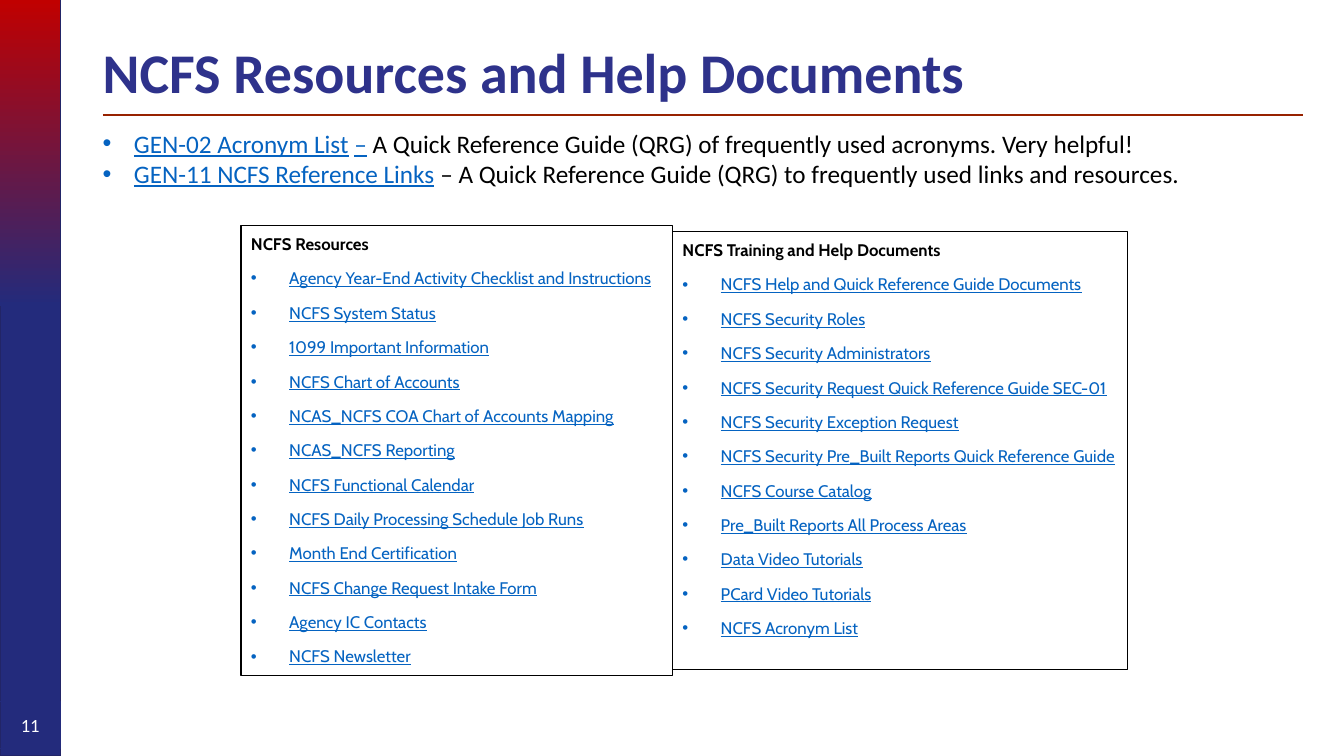
from lxml.etree import SubElement
from pptx import Presentation
from pptx.dml.color import RGBColor
from pptx.enum.shapes import MSO_CONNECTOR, MSO_SHAPE
from pptx.enum.text import MSO_ANCHOR as ANCHOR, PP_ALIGN as ALIGN
from pptx.oxml.ns import qn
from pptx.util import Pt

SCALE = 9144  # EMU per px, 100 px to the inch
NAVY, RED, LINK, BLACK, WHITE = "232B7C", "C00000", "0563C1", "000000", "FFFFFF"

TITLE = {"size": Pt(40), "name": "Calibri", "bold": True}
INTRO = {"size": Pt(18), "name": "Calibri"}
NUMBER = {"size": Pt(13.3), "name": "Calibri"}
HEADING = {"size": Pt(12), "name": "Cabin", "bold": True}
ITEM = {"size": Pt(12), "name": "Cabin"}
LIST_FORMAT = {"line_spacing": 1.15, "space_after": Pt(8), "alignment": ALIGN.LEFT}

GUIDES = [
    [("GEN-02 Acronym List", True), (" ", False), ("–", True),
     (" A Quick Reference Guide (QRG) of frequently used acronyms. Very helpful!", False)],
    [("GEN-11 NCFS Reference Links", True),
     (" – A Quick Reference Guide (QRG) to frequently used links and resources.", False)],
]
RESOURCES = [
    "Agency Year-End Activity Checklist and Instructions",
    "NCFS System Status",
    "1099 Important Information",
    "NCFS Chart of Accounts",
    "NCAS_NCFS COA Chart of Accounts Mapping",
    "NCAS_NCFS Reporting",
    "NCFS Functional Calendar",
    "NCFS Daily Processing Schedule Job Runs",
    "Month End Certification",
    "NCFS Change Request Intake Form",
    "Agency IC Contacts",
    "NCFS Newsletter",
]
TRAINING = [
    "NCFS Help and Quick Reference Guide Documents",
    "NCFS Security Roles",
    "NCFS Security Administrators",
    "NCFS Security Request Quick Reference Guide SEC-01",
    "NCFS Security Exception Request",
    "NCFS Security Pre_Built Reports Quick Reference Guide",
    "NCFS Course Catalog",
    "Pre_Built Reports All Process Areas",
    "Data Video Tutorials",
    "PCard Video Tutorials",
    "NCFS Acronym List",
]


def px(*lengths):
    return [length * SCALE for length in lengths]


def rgb(value):
    return RGBColor.from_string(value)


def apply(target, values):
    for name, value in values.items():
        setattr(target, name, value)


def add_rect(slide, box, fill=None, line=None, width=0.75):
    rect = slide.shapes.add_shape(MSO_SHAPE.RECTANGLE, *px(*box))
    rect.shadow.inherit = False
    if fill:
        rect.fill.solid()
        rect.fill.fore_color.rgb = rgb(fill)
    else:
        rect.fill.background()
    if line:
        rect.line.color.rgb = rgb(line)
        rect.line.width = Pt(width)
    else:
        rect.line.fill.background()
    return rect


def open_frame(shape, anchor=ANCHOR.TOP):
    apply(shape.text_frame, {"word_wrap": True, "vertical_anchor": anchor})
    return shape.text_frame


def add_run(paragraph, text, style, color, underline=False):
    run = paragraph.add_run()
    run.text = text
    apply(run.font, {**style, "underline": underline})
    run.font.color.rgb = rgb(color)


def add_bullet(paragraph, indent):
    props = paragraph._p.get_or_add_pPr()
    props.set("marL", str(indent * SCALE))
    props.set("indent", str(-indent * SCALE))
    SubElement(SubElement(props, qn("a:buClr")), qn("a:srgbClr"), val=LINK)
    SubElement(props, qn("a:buFont"), typeface="Arial")
    SubElement(props, qn("a:buChar"), char="•")


def add_sidebar(slide, box, number):
    left, top, width, height = box
    add_rect(slide, box, NAVY, "222567", 1)

    # Red fading into the navy band
    fade = add_rect(slide, (left, top, width, 304))
    fade.fill.gradient()
    fade.fill.gradient_angle = 270
    for stop, color in zip(fade.fill.gradient_stops, (RED, NAVY)):
        stop.color.rgb = rgb(color)

    # Slide number
    badge = add_rect(slide, (left, top + height - 54, width, 47), line=NAVY)
    paragraph = open_frame(badge, ANCHOR.MIDDLE).paragraphs[0]
    paragraph.alignment = ALIGN.CENTER
    add_run(paragraph, number, NUMBER, WHITE)


def add_header(slide, box, title):
    left, top, width, height = box
    heading = slide.shapes.add_textbox(*px(*box))
    paragraph = open_frame(heading, ANCHOR.MIDDLE).paragraphs[0]
    paragraph.line_spacing = 0.9
    add_run(paragraph, title, TITLE, "2E328B")

    # Rule under the title
    rule_y = top + height + 5
    rule = slide.shapes.add_connector(
        MSO_CONNECTOR.STRAIGHT, *px(left + 10, rule_y, left + 1200, rule_y))
    rule.line.color.rgb = rgb("972200")
    rule.line.width = Pt(1.5)
    SubElement(rule._element.spPr, qn("a:effectLst"))


def add_intro(slide, box, guides):
    frame = open_frame(slide.shapes.add_textbox(*px(*box)))
    for index, guide in enumerate(guides):
        paragraph = frame.add_paragraph() if index else frame.paragraphs[0]
        add_bullet(paragraph, 31)
        for text, linked in guide:
            add_run(paragraph, text, INTRO, LINK if linked else BLACK, linked)


def add_link_panel(slide, box, heading, items):
    frame = open_frame(add_rect(slide, box, line=BLACK))
    first = frame.paragraphs[0]
    apply(first, LIST_FORMAT)
    add_run(first, heading, HEADING, BLACK)
    for item in items:
        paragraph = frame.add_paragraph()
        apply(paragraph, LIST_FORMAT)
        add_bullet(paragraph, 38)
        add_run(paragraph, item, ITEM, LINK, True)


def main():
    deck = Presentation()
    deck.slide_width, deck.slide_height = px(1333, 750)
    slide = deck.slides.add_slide(deck.slide_layouts[6])
    add_sidebar(slide, (0, 0, 60, 750), "11")
    add_header(slide, (92, 40, 1042, 69), "NCFS Resources and Help Documents")
    add_intro(slide, (92, 122, 1208, 71), GUIDES)
    add_link_panel(slide, (239, 224, 428, 446), "NCFS Resources", RESOURCES)
    add_link_panel(slide, (667, 230, 451, 434), "NCFS Training and Help Documents", TRAINING)
    deck.save("out.pptx")


if __name__ == "__main__":
    main()
